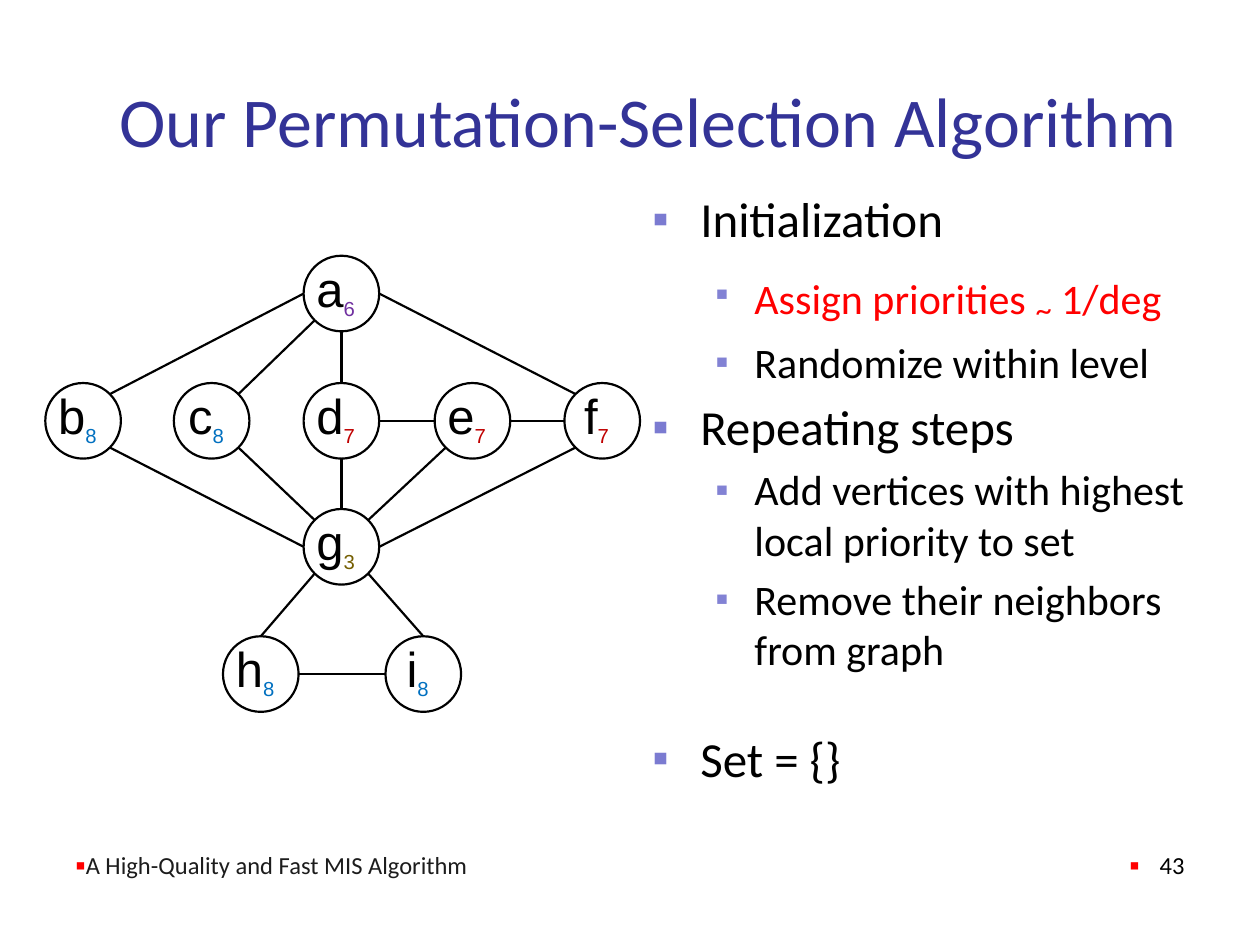
import math

import pptx
import pptx.util
import pptx.dml.color
import pptx.enum.shapes
import pptx.enum.text
import pptx.oxml
import pptx.oxml.ns
from pptx.util import Inches, Pt

ANCHOR = pptx.enum.text.MSO_ANCHOR
ALIGN = pptx.enum.text.PP_ALIGN

TITLE = "Our Permutation-Selection Algorithm"
FOOTER = "A High-Quality and Fast MIS Algorithm"
PAGE_NUMBER = "43"
BLACK, RED, BLUE = "000000", "FF0000", "0070C0"

# Level, space before in points, colour, spans of (text, size, baseline percent)
STEPS = [
    (0, 0, BLACK, [("Initialization", 28, 0)]),
    (1, 6.4, RED, [("Assign priorities ", 24, 0), ("~", 32, -12), (" 1/deg", 24, 0)]),
    (1, 4.8, BLACK, [("Randomize within level", 24, 0)]),
    (0, 5.6, BLACK, [("Repeating steps", 28, 0)]),
    (1, 4.8, BLACK, [("Add vertices with highest local priority to set", 24, 0)]),
    (1, 4.8, BLACK, [("Remove their neighbors from graph", 24, 0)]),
    (0, 31, BLACK, [("Set = {}", 28, 0)]),
]
# Text indent in inches, hanging first line, bullet colour, bullet size percent
LEVELS = [(0.38, -0.38, "7B7BD1", 95), (0.81, -0.31, "8282D4", 90)]

DIAMETER = 0.6
ROWS = [2.03, 3.04, 4.04, 5.05]
PRIORITY_COLORS = {"3": "745E00", "6": "7030A0", "7": "C00000", "8": BLUE}
# Vertex: left, row, priority
VERTICES = {
    "a": (2.41, 0, "6"),
    "b": (0.36, 1, "8"), "c": (1.38, 1, "8"), "d": (2.41, 1, "7"),
    "e": (3.45, 1, "7"), "f": (4.48, 1, "7"),
    "g": (2.41, 2, "3"),
    "h": (1.77, 3, "8"), "i": (3.06, 3, "8"),
}
# Vertex and compass point at each end
EDGES = [
    ("d", "S", "g", "N"), ("f", "SW", "g", "E"), ("e", "W", "d", "E"),
    ("f", "W", "e", "E"), ("a", "SW", "c", "NE"), ("a", "W", "b", "NE"),
    ("a", "S", "d", "N"), ("c", "SE", "g", "NW"), ("a", "E", "f", "NW"),
    ("b", "SE", "g", "W"), ("g", "SW", "h", "N"), ("g", "SE", "i", "N"),
    ("h", "E", "i", "W"), ("e", "SW", "g", "NE"),
]
COMPASS = ["E", "SE", "S", "SW", "W", "NW", "N", "NE"]


def color(value):
    return pptx.dml.color.RGBColor.from_string(value)


def add_text(para, text, size, fill=BLACK, font="Calibri", baseline=0):
    span = para.add_run()
    span.text = text
    span.font.size = Pt(size)
    span.font.name = font
    span.font.color.rgb = color(fill)
    if baseline:
        span.font._element.set("baseline", str(baseline * 1000))


def add_bullet(para, indent, hanging, fill, percent):
    properties = para._p.get_or_add_pPr()
    properties.set("marL", str(Inches(indent)))
    properties.set("indent", str(Inches(hanging)))
    namespace = pptx.oxml.ns.nsdecls("a")
    for element in (
        f'<a:buClr {namespace}><a:srgbClr val="{fill}"/></a:buClr>',
        f'<a:buSzPct {namespace} val="{percent * 1000}"/>',
        f'<a:buFont {namespace} typeface="Arial"/>',
        f'<a:buChar {namespace} char="▪"/>',
    ):
        properties.append(pptx.oxml.parse_xml(element))


def add_box(page, left, top, width, height, anchor):
    box = page.shapes.add_textbox(*map(Inches, (left, top, width, height)))
    frame = box.text_frame
    frame.word_wrap = True
    frame.vertical_anchor = anchor
    return frame


def port(name, direction):
    """Return the point on a vertex's rim in a compass direction."""
    left, row, _ = VERTICES[name]
    radius = DIAMETER / 2
    angle = COMPASS.index(direction) * math.pi / 4
    return (Inches(left + radius + radius * math.cos(angle)),
            Inches(ROWS[row] + radius + radius * math.sin(angle)))


def add_edge(page, start, start_side, end, end_side):
    edge = page.shapes.add_connector(
        pptx.enum.shapes.MSO_CONNECTOR.STRAIGHT,
        *port(start, start_side), *port(end, end_side))
    edge.line.color.rgb = color(BLACK)
    edge.line.width = Pt(1.25)
    edge._element.spPr.append(
        pptx.oxml.parse_xml(f'<a:effectLst {pptx.oxml.ns.nsdecls("a")}/>'))


def add_vertex(page, name):
    left, row, priority = VERTICES[name]
    vertex = page.shapes.add_shape(
        pptx.enum.shapes.MSO_SHAPE.OVAL,
        Inches(left), Inches(ROWS[row]), Inches(DIAMETER), Inches(DIAMETER))
    vertex.shadow.inherit = False
    vertex.fill.background()
    vertex.line.color.rgb = color(BLACK)
    vertex.line.width = Pt(1.25)
    frame = vertex.text_frame
    frame.margin_left = frame.margin_top = frame.margin_bottom = 0
    frame.margin_right = Inches(0.09)
    frame.word_wrap = False
    frame.vertical_anchor = ANCHOR.BOTTOM
    para = frame.paragraphs[0]
    para.alignment = ALIGN.CENTER
    add_text(para, name, 28, font="Arial")
    add_text(para, priority, 20, PRIORITY_COLORS[priority], "Arial", -25)


def main():
    deck = pptx.Presentation()
    deck.slide_width, deck.slide_height = Inches(10), Inches(7.5)
    page = deck.slides.add_slide(deck.slide_layouts[6])

    for edge in EDGES:
        add_edge(page, *edge)

    title = add_box(page, 0.5, 0.6, 9, 0.7, ANCHOR.MIDDLE)
    title.margin_left = Inches(0.45)
    add_text(title.paragraphs[0], TITLE, 40, "333397")

    body = add_box(page, 5.08, 1.45, 4.5, 4.9, ANCHOR.TOP)
    for index, (level, space, fill, spans) in enumerate(STEPS):
        para = body.add_paragraph() if index else body.paragraphs[0]
        para.level = level
        if space:
            para.space_before = Pt(space)
        add_bullet(para, *LEVELS[level])
        for text, size, baseline in spans:
            add_text(para, text, size, fill, baseline=baseline)

    footer = add_box(page, 0.5, 6.53, 6.92, 0.5, ANCHOR.BOTTOM).paragraphs[0]
    add_bullet(footer, 0, 0, RED, 120)
    add_text(footer, FOOTER, 14, "1C1C1C")

    number = add_box(page, 7.42, 6.53, 2.08, 0.5, ANCHOR.BOTTOM).paragraphs[0]
    number.alignment = ALIGN.RIGHT
    add_bullet(number, 0.24, -0.24, RED, 120)
    add_text(number, PAGE_NUMBER, 14)

    for name in VERTICES:
        add_vertex(page, name)

    deck.save("out.pptx")


if __name__ == "__main__":
    main()
